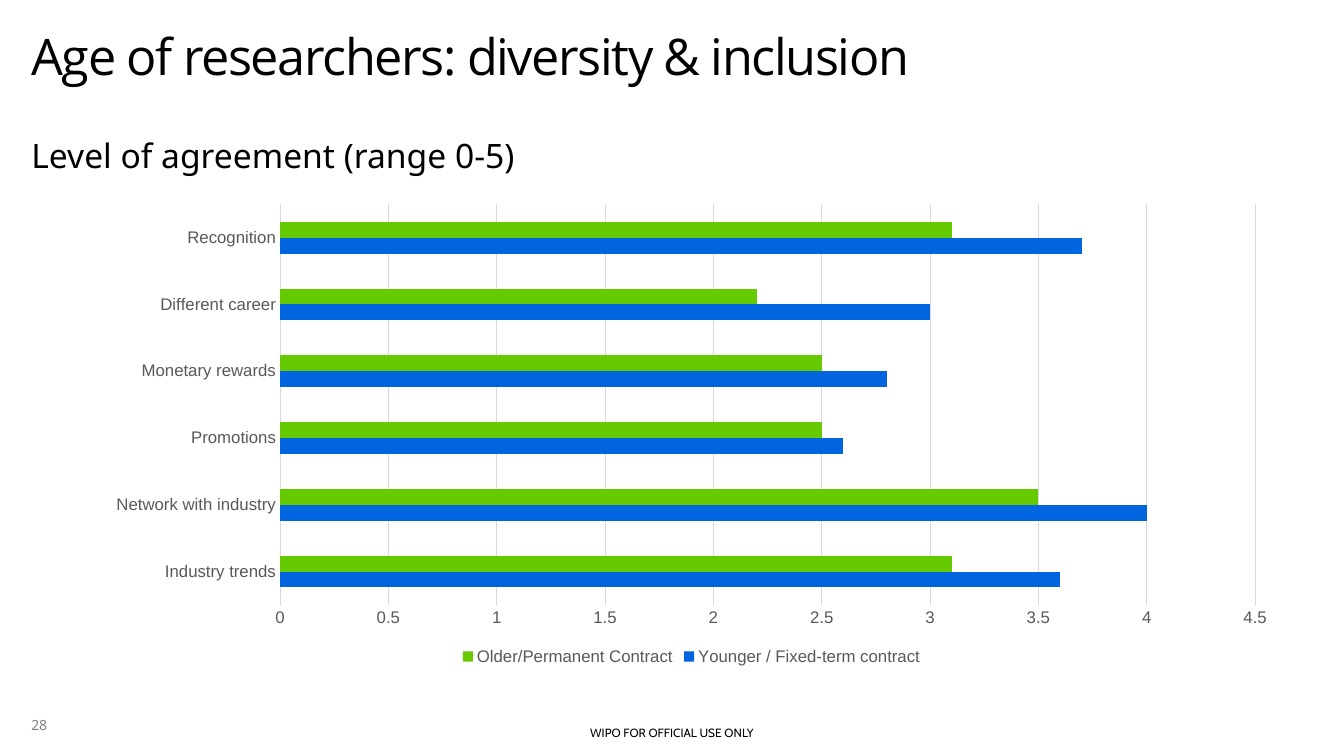
from lxml import etree
from pptx import Presentation
from pptx import util as u
from pptx.chart.data import CategoryChartData
from pptx.dml.color import RGBColor
from pptx.enum import chart as charts, text
from pptx.oxml.ns import qn

TITLE = "Age of researchers: diversity & inclusion"
SUBTITLE = "Level of agreement (range 0-5)"
PAGE_NUMBER = "28"
FOOTER = "WIPO FOR OFFICIAL USE ONLY"
CATEGORIES = ["Industry trends", "Network with industry", "Promotions",
              "Monetary rewards", "Different career", "Recognition"]
SERIES = [
    ("Younger / Fixed-term contract", "blue", (3.6, 4, 2.6, 2.8, 3, 3.7)),
    ("Older/Permanent Contract", "green", (3.1, 3.5, 2.5, 2.5, 2.2, 3.1)),
]
COLORS = {"blue": "0065DF", "green": "65CA00", "black": "000000",
          "number": "808080", "label": "595959", "grid": "D9D9D9"}
WIDTH, HEIGHT, MARGIN = 33.87, 19.05, 0.79


def color(name):
    return RGBColor.from_string(COLORS[name])


def style_font(font, size, name, tint):
    font.size, font.name, font.color.rgb = u.Pt(size), name, color(tint)


def write(shape, content, place, size, font, tint="black", align=text.PP_ALIGN.LEFT,
          anchor=text.MSO_ANCHOR.TOP, inset=0, line=1.0, before=0, tracking=0):
    shape.left, shape.top, shape.width, shape.height = map(u.Cm, place)
    frame = shape.text_frame
    frame.word_wrap = True
    frame.auto_size = text.MSO_AUTO_SIZE.NONE
    frame.vertical_anchor = anchor
    frame.margin_left = frame.margin_right = u.Cm(inset)
    frame.margin_top = frame.margin_bottom = u.Cm(inset / 2)
    para = frame.paragraphs[0]
    para.alignment, para.line_spacing, para.space_before = align, line, u.Pt(before)
    properties = para._p.get_or_add_pPr()
    properties.set("marL", "0")
    properties.set("indent", "0")
    etree.SubElement(properties, qn("a:buNone"))
    span = para.add_run()
    span.text = content
    style_font(span.font, size, font, tint)
    if tracking:
        span._r.get_or_add_rPr().set("spc", str(tracking * 100))


def add_agreement_chart(page):
    data = CategoryChartData()
    data.categories = CATEGORIES
    for name, tint, values in SERIES:
        data.add_series(name, values)
    place = map(u.Cm, (2.33, 4.91, 30.2, 11.96))
    chart = page.shapes.add_chart(charts.XL_CHART_TYPE.BAR_CLUSTERED, *place, data).chart
    style_font(chart.font, 10, "Calibri", "black")
    chart.has_title = False
    chart.has_legend = True
    chart.legend.position = charts.XL_LEGEND_POSITION.BOTTOM
    chart.legend.include_in_layout = False
    style_font(chart.legend.font, 12, "Arial", "label")

    plot = chart.plots[0]
    plot.gap_width, plot.overlap, plot.vary_by_categories = 219, 0, False
    for series, (name, tint, values) in zip(plot.series, SERIES):
        series.format.fill.solid()
        series.format.fill.fore_color.rgb = color(tint)

    for axis in (chart.category_axis, chart.value_axis):
        axis.major_tick_mark = axis.minor_tick_mark = charts.XL_TICK_MARK.NONE
        style_font(axis.tick_labels.font, 12, "Arial", "label")
    scale = chart.value_axis
    scale.minimum_scale, scale.maximum_scale, scale.major_unit = 0, 4.5, 0.5
    scale.has_major_gridlines = True
    scale.format.line.fill.background()
    for line in (chart.category_axis.format.line, scale.major_gridlines.format.line):
        line.color.rgb = color("grid")
        line.width = u.Pt(0.75)


def main():
    deck = Presentation()
    deck.slide_width, deck.slide_height = u.Cm(WIDTH), u.Cm(HEIGHT)
    page = deck.slides.add_slide(deck.slide_layouts[1])
    write(page.shapes.title, TITLE, (MARGIN, 0.81, 29.21, 3.68), 36, "Open Sans",
          line=0.9, tracking=-1)
    write(page.placeholders[1], SUBTITLE, (MARGIN, 2.9, 29.44, 2), 24, "Noto Sans",
          line=1.5, before=10)
    add_agreement_chart(page)
    number = page.shapes.add_textbox(0, 0, 0, 0)
    write(number, PAGE_NUMBER, (MARGIN, 17.46, 3.07, 1.02), 10, "Noto Sans",
          tint="number", anchor=text.MSO_ANCHOR.BOTTOM)
    footer = page.shapes.add_textbox(0, 0, 0, 0)
    write(footer, FOOTER, (0, 18.16, WIDTH, 0.61), 8.5, "Cabin",
          align=text.PP_ALIGN.CENTER, inset=0.25)
    deck.save("out.pptx")


if __name__ == "__main__":
    main()
